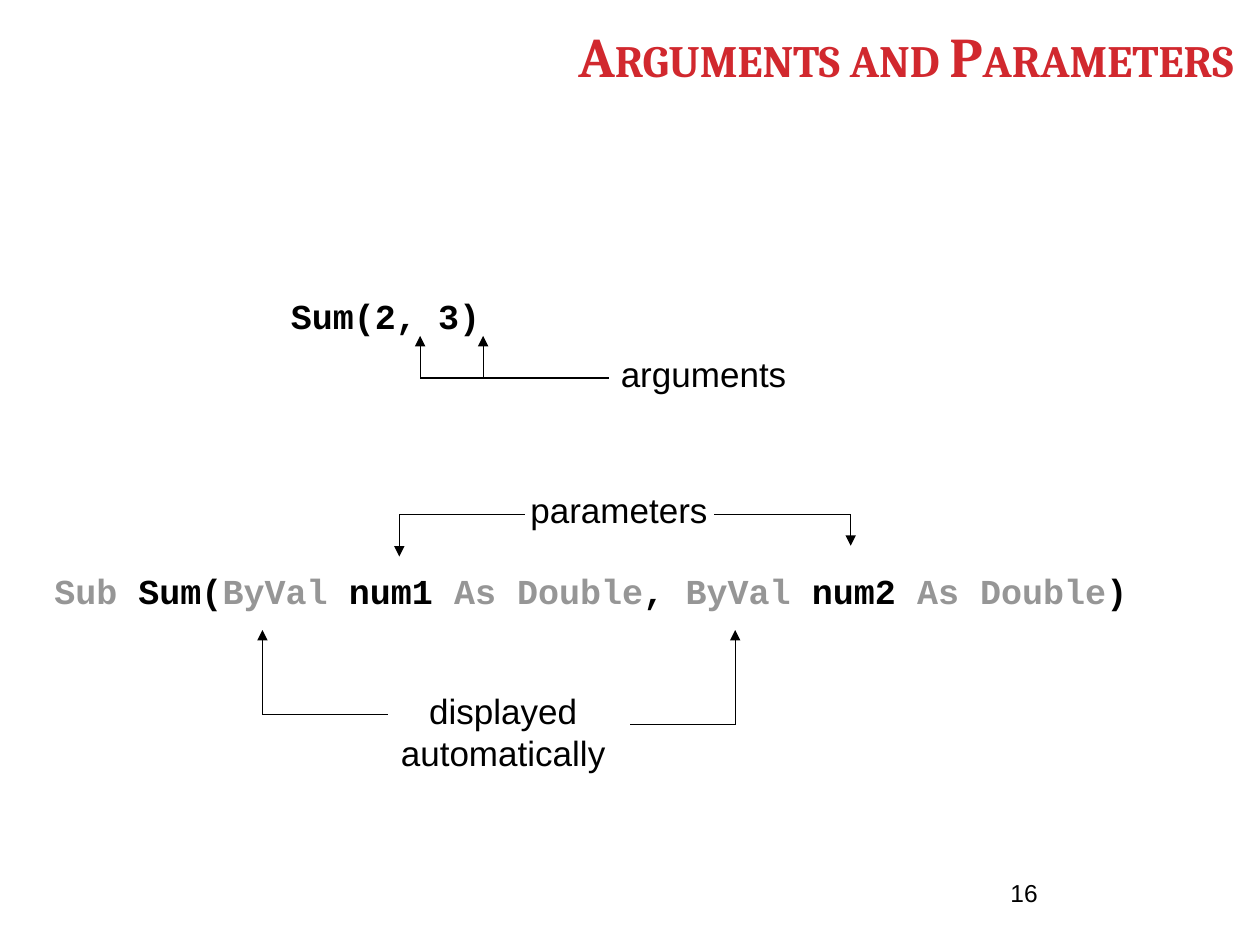
from lxml import etree
from pptx import Presentation
from pptx.dml.color import RGBColor
from pptx.enum.shapes import MSO_CONNECTOR
from pptx.enum.text import MSO_ANCHOR, MSO_AUTO_SIZE, PP_ALIGN
from pptx.oxml.ns import qn
from pptx.util import Cm, Pt

STRAIGHT = MSO_CONNECTOR.STRAIGHT
CENTER, LEFT, RIGHT = PP_ALIGN.CENTER, PP_ALIGN.LEFT, PP_ALIGN.RIGHT
TOP, BOTTOM = MSO_ANCHOR.TOP, MSO_ANCHOR.BOTTOM
NO_FIT = MSO_AUTO_SIZE.NONE

# Content; all lengths in centimetres
BLACK, GREY, RED = "000000", "969696", "D1282E"
TITLE = "Arguments and Parameters"

# Code lines: indent, space before in points, coloured pieces
CODE_LINES = [
    (4.77, 0, [("Sum(2, 3)", BLACK)]),
    (0, 133, [("Sub ", GREY), ("Sum(", BLACK), ("ByVal", GREY),
              (" num1 ", BLACK), ("As Double", GREY), (", ", BLACK),
              ("ByVal", GREY), (" num2 ", BLACK), ("As Double", GREY),
              (")", BLACK)]),
]

# Labels: text, left, top, width, height, size, alignment
LABELS = [
    ("arguments", 11.86, 6.99, 4.65, 1.09, 20, CENTER),
    ("parameters", 10.36, 9.73, 4.24, 1.09, 20, CENTER),
    ("displayed automatically", 7.82, 13.77, 4.65, 1.96, 20, CENTER),
    ("16", 20.12, 17.58, 5.28, 1.27, 14, LEFT),
]

# Brackets: rail height, rail start, rail end, arrow tips (x, y)
BRACKETS = [
    (7.62, 8.47, 12.27, [(8.47, 6.77), (9.74, 6.77)]),
    (10.37, 8.05, 10.58, [(8.05, 10.37), (8.05, 11.22)]),
    (10.37, 14.4, 17.15, [(17.15, 11)]),
    (14.4, 5.29, 7.83, [(5.29, 12.7)]),
    (14.61, 12.7, 14.82, [(14.82, 12.7)]),
]


def color(hex_text):
    return RGBColor.from_string(hex_text)


def style(span, font, size, hex_text, bold=False):
    span.font.name = font
    span.font.size = Pt(size)
    span.font.bold = bold
    span.font.color.rgb = color(hex_text)


def place(box, left, top, width, height):
    box.left, box.top = Cm(left), Cm(top)
    box.width, box.height = Cm(width), Cm(height)


def add_line(page, x1, y1, x2, y2, arrow=False):
    line = page.shapes.add_connector(STRAIGHT, Cm(x1), Cm(y1), Cm(x2), Cm(y2))
    line.line.color.rgb = color(BLACK)
    line.line.width = Pt(0.75)
    if arrow:
        outline = line.line._get_or_add_ln()
        etree.SubElement(outline, qn("a:tailEnd"), type="triangle")
    etree.SubElement(line._element.spPr, qn("a:effectLst"))


def add_title(page):
    box = page.shapes.title
    place(box, 0.43, 0.36, 24.69, 1.55)
    frame = box.text_frame
    frame.text = TITLE
    frame.auto_size = NO_FIT
    frame.vertical_anchor = BOTTOM
    para = frame.paragraphs[0]
    para.alignment = RIGHT
    span = para.runs[0]
    style(span, "Cambria", 32, RED, bold=True)
    span.font._element.set("cap", "small")


def add_code(page):
    box = page.placeholders[1]
    place(box, 0.84, 5.51, 24.03, 11.53)
    frame = box.text_frame
    frame.auto_size = NO_FIT
    frame.vertical_anchor = TOP
    frame.margin_top = Cm(0.43)
    for index, (indent, space, pieces) in enumerate(CODE_LINES):
        para = frame.add_paragraph() if index else frame.paragraphs[0]
        properties = para._p.get_or_add_pPr()
        properties.set("marL", str(Cm(indent)))
        properties.set("indent", "0")
        etree.SubElement(properties, qn("a:buNone"))
        para.space_before = Pt(space)
        for text, hex_text in pieces:
            span = para.add_run()
            span.text = text
            style(span, "Courier New", 20, hex_text, bold=True)


def add_label(page, text, left, top, width, height, size, alignment):
    box = page.shapes.add_textbox(Cm(left), Cm(top), Cm(width), Cm(height))
    frame = box.text_frame
    frame.word_wrap = True
    frame.text = text
    para = frame.paragraphs[0]
    para.alignment = alignment
    style(para.runs[0], "Arial", size, BLACK)


def main():
    deck = Presentation()
    deck.slide_width, deck.slide_height = Cm(25.4), Cm(19.05)
    page = deck.slides.add_slide(deck.slide_layouts[1])
    add_title(page)
    add_code(page)

    # Labels and the brackets that tie them to the code
    for label in LABELS:
        add_label(page, *label)
    for rail, start, end, tips in BRACKETS:
        add_line(page, start, rail, end, rail)
        for x, y in tips:
            add_line(page, x, rail, x, y, arrow=True)

    deck.save("out.pptx")


if __name__ == "__main__":
    main()
